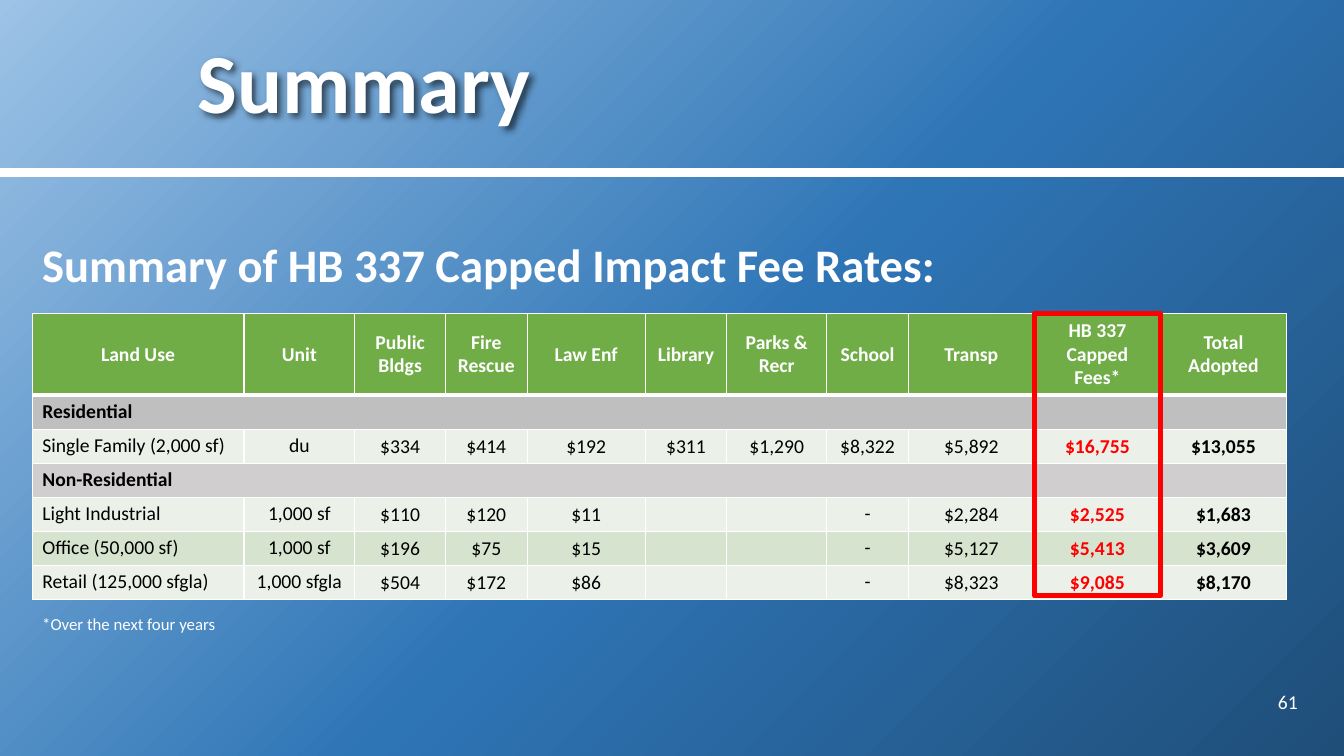
from dataclasses import dataclass
from lxml.etree import SubElement
from pptx import Presentation
from pptx.dml.color import RGBColor
from pptx.enum.shapes import MSO_CONNECTOR as Conn, MSO_SHAPE as Shape
from pptx.enum.text import MSO_ANCHOR as Anchor, PP_ALIGN as Align
from pptx.oxml.ns import qn
from pptx.util import Emu, Inches, Pt

FONT = "Calibri"
WHITE, BLACK, RED = "FFFFFF", "000000", "FF0000"
GREEN, PALE, TINT = "70AD47", "EBF1E9", "D5E3CF"
SLIDE_W, SLIDE_H = Inches(13.33), Inches(7.5)
LEFT, TABLE_TOP, HEADER_H, ROW_H = 2.4, 41.47, 10.8, 4.5
COLUMNS = [15.75, 8.25, 6.75, 6.08, 8.78, 6.08, 7.43, 6.08, 9.38, 9.38, 9.38]
CAPPED, TOTAL = 9, 10


@dataclass
class Label:
    text: str
    x: float
    y: float
    w: float
    h: float
    size: float
    bold: bool = False
    align: Align = Align.LEFT
    anchor: Anchor = Anchor.TOP
    spacing: float = 1.0
    shadow: bool = False


@dataclass
class Row:
    values: list[str]
    fill: str
    kind: str = "fees"


LABELS = [
    Label("61", 90.62, 90.13, 6.68, 5.33, 14, align=Align.RIGHT, anchor=Anchor.MIDDLE),
    Label("Summary of HB 337 Capped Impact Fee Rates:", LEFT, 29.8, 95.87, 9.2, 33.3,
          bold=True, spacing=1.1),
    Label("Summary", 13.95, 0, 83.27, 22.8, 60, bold=True, anchor=Anchor.MIDDLE,
          spacing=0.9, shadow=True),
    Label("*Over the next four years", LEFT, 80.53, 82.37, 4, 12),
]

ROWS = [
    Row(["Land Use", "Unit", "Public Bldgs", "Fire Rescue", "Law Enf", "Library",
         "Parks & Recr", "School", "Transp", "HB 337 Capped Fees*", "Total Adopted"],
        GREEN, "header"),
    Row(["Residential"], "BFBFBF", "section"),
    Row(["Single Family (2,000 sf)", "du", "$334", "$414", "$192", "$311", "$1,290",
         "$8,322", "$5,892", "$16,755", "$13,055"], PALE),
    Row(["Non-Residential"], "D0CECE", "section"),
    Row(["Light Industrial", "1,000 sf", "$110", "$120", "$11", "", "", "-",
         "$2,284", "$2,525", "$1,683"], PALE),
    Row(["Office (50,000 sf)", "1,000 sf", "$196", "$75", "$15", "", "", "-",
         "$5,127", "$5,413", "$3,609"], TINT),
    Row(["Retail (125,000 sfgla)", "1,000 sfgla", "$504", "$172", "$86", "", "", "-",
         "$8,323", "$9,085", "$8,170"], PALE),
]


def wide(percent: float) -> Emu:
    return Emu(round(SLIDE_W * percent / 100))


def high(percent: float) -> Emu:
    return Emu(round(SLIDE_H * percent / 100))


def rgb(value: str) -> RGBColor:
    return RGBColor.from_string(value)


def node(parent, tag: str, **attrs):
    return SubElement(parent, qn(f"a:{tag}"), {k: str(v) for k, v in attrs.items()})


def add_run(p, text: str, size: float, color: str, bold: bool) -> None:
    r = p.add_run()
    r.text = text
    r.font.name, r.font.size, r.font.bold = FONT, Pt(size), bold
    r.font.color.rgb = rgb(color)


def paint_background(s) -> None:
    s.background.fill.gradient()
    grad = next(s._element.iter(qn("a:gradFill")))
    for child in list(grad):
        grad.remove(child)
    stops = node(grad, "gsLst")
    for pos, color in ((0, "9DC3E6"), (53, "2E75B6"), (100, "1F4E79")):
        node(node(stops, "gs", pos=pos * 1000), "srgbClr", val=color)
    circle = node(grad, "path", path="circle")
    node(circle, "fillToRect", r=100000, b=100000)


def add_label(s, label: Label) -> None:
    sp = s.shapes.add_textbox(wide(label.x), high(label.y), wide(label.w), high(label.h))
    tf = sp.text_frame
    tf.word_wrap = True
    tf.vertical_anchor = label.anchor
    p = tf.paragraphs[0]
    p.alignment, p.line_spacing = label.align, label.spacing
    add_run(p, label.text, label.size, WHITE, label.bold)
    if label.shadow:
        effects = node(sp._element.spPr, "effectLst")
        outer = node(effects, "outerShdw", blurRad=Pt(4), dist=Pt(3), dir=2700000)
        node(node(outer, "srgbClr", val=BLACK), "alpha", val=60000)


def add_rule(s, y: float) -> None:
    rule = s.shapes.add_connector(Conn.STRAIGHT, 0, high(y), SLIDE_W, high(y))
    rule.line.color.rgb = rgb(WHITE)
    rule.line.width = Pt(6)
    node(rule._element.spPr, "effectLst")


def add_borders(cell, bottom: float) -> None:
    tc_pr = cell._tc.get_or_add_tcPr()
    for i, (side, width) in enumerate((("L", 1), ("R", 1), ("T", 1), ("B", bottom))):
        ln = node(tc_pr, f"ln{side}", w=Pt(width))
        node(node(ln, "solidFill"), "srgbClr", val=WHITE)
        tc_pr.insert(i, ln)


def fill_cell(cell, row: Row, col: int) -> None:
    header = row.kind == "header"
    text = row.values[col] if col < len(row.values) else ""
    cell.fill.solid()
    cell.fill.fore_color.rgb = rgb(row.fill)
    add_borders(cell, 3 if header else 1)
    cell.vertical_anchor = Anchor.MIDDLE
    if text.startswith("$"):
        cell.margin_left = cell.margin_right = cell.margin_top = Inches(0.01)
        cell.margin_bottom = 0
    p = cell.text_frame.paragraphs[0]
    p.alignment = Align.CENTER if header or col else Align.LEFT
    if not text:
        node(p._p, "endParaRPr", sz=1400)
        return
    color = WHITE if header else RED if col == CAPPED else BLACK
    add_run(p, text, 14, color, row.kind != "fees" or col >= CAPPED)


def add_fee_table(s) -> None:
    height = HEADER_H + ROW_H * (len(ROWS) - 1)
    frame = s.shapes.add_table(len(ROWS), len(COLUMNS), wide(LEFT), high(TABLE_TOP),
                               wide(sum(COLUMNS)), high(height))
    table = frame.table
    table.horz_banding = False
    for column, width in zip(table.columns, COLUMNS):
        column.width = wide(width)
    for i, row in enumerate(ROWS):
        table.rows[i].height = high(ROW_H if i else HEADER_H)
        for col in range(len(COLUMNS)):
            fill_cell(table.cell(i, col), row, col)
        if row.kind == "section":
            table.cell(i, 0).merge(table.cell(i, CAPPED))


def add_highlight(s) -> None:
    sp = s.shapes.add_shape(Shape.RECTANGLE, wide(LEFT + sum(COLUMNS[:CAPPED])),
                            high(TABLE_TOP), wide(COLUMNS[CAPPED]), high(37.33))
    sp.shadow.inherit = False
    sp.fill.background()
    sp.line.color.rgb = rgb(RED)
    sp.line.width = Pt(4)


def main() -> None:
    prs = Presentation()
    prs.slide_width, prs.slide_height = SLIDE_W, SLIDE_H
    s = prs.slides.add_slide(prs.slide_layouts[6])
    paint_background(s)
    add_rule(s, 22.8)
    add_fee_table(s)
    add_highlight(s)
    for label in LABELS:
        add_label(s, label)
    prs.save("out.pptx")


if __name__ == "__main__":
    main()
